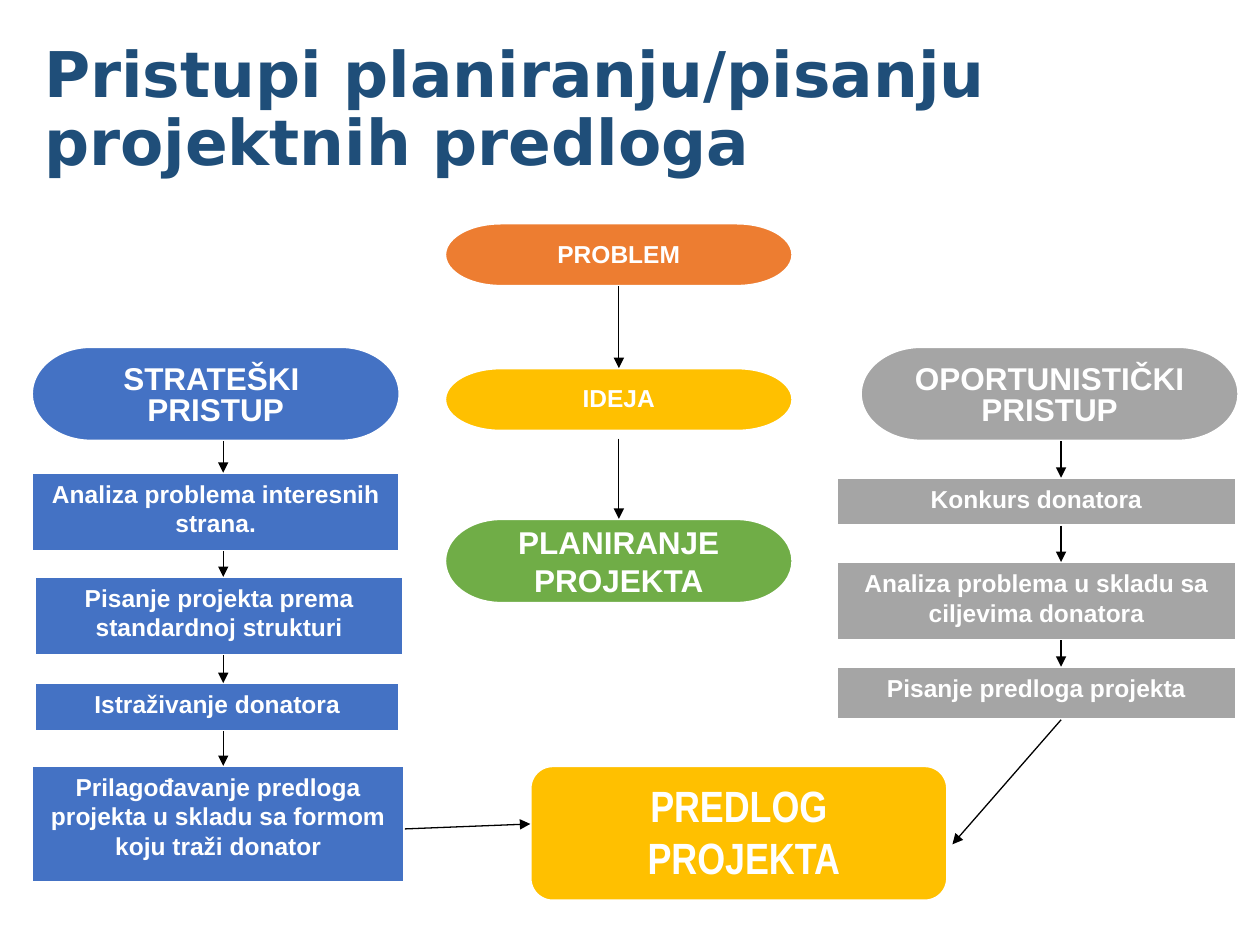
from dataclasses import dataclass
from itertools import pairwise
from typing import Optional

from lxml.etree import SubElement
from pptx import Presentation
from pptx.dml.color import RGBColor
from pptx.enum.shapes import MSO_CONNECTOR, MSO_SHAPE as Shp
from pptx.enum.text import MSO_ANCHOR as Anchor, PP_ALIGN as Align
from pptx.oxml.ns import qn
from pptx.shapes.autoshape import Shape
from pptx.shapes.connector import Connector
from pptx.util import Cm, Pt


@dataclass(frozen=True)
class Theme:
    title: str = "1F4E79"
    white: str = "FFFFFF"
    arrow: str = "000000"
    blue: str = "4472C4"
    gray: str = "A5A5A5"
    orange: str = "ED7D31"
    yellow: str = "FFC000"
    green: str = "70AD47"
    font: str = "Arial"
    title_font: str = "DejaVu Sans"
    result_font: str = "Arial Narrow"
    title_size: int = 36
    result_size: int = 25
    heading_size: int = 18
    step_size: int = 14
    outline: float = 1.5
    arrow_width: float = 0.75


T = Theme()


@dataclass(frozen=True)
class Box:
    """A flow chart box; lengths in centimetres, one paragraph per text line."""
    text: str
    left: float
    top: float
    width: float
    height: float
    fill: str
    kind: Shp = Shp.FLOWCHART_PROCESS
    size: int = T.step_size
    font: str = T.font
    anchor: Anchor = Anchor.TOP
    spacing: Optional[float] = None

    @property
    def bottom(self) -> float:
        return self.top + self.height


HEADING = {"kind": Shp.FLOWCHART_TERMINATOR, "size": T.heading_size}
LEFT_X, CENTER_X, RIGHT_X = 0.64, 8.97, 16.87
LEFT_W, CENTER_W, RIGHT_W = 7.42, 7.01, 8.05
LEFT_ARROW_X, RIGHT_ARROW_X = 4.5, 21.39

STRATEGIC = [
    Box("STRATEŠKI \nPRISTUP", LEFT_X, 6.99, LEFT_W, 1.9, T.blue, spacing=0.8, **HEADING),
    Box("Analiza problema interesnih strana.", LEFT_X, 9.53, LEFT_W, 1.58, T.blue),
    Box("Pisanje projekta prema standardnoj strukturi", 0.71, 11.63, LEFT_W, 1.58, T.blue),
    Box("Istraživanje donatora", 0.71, 13.77, 7.34, 0.97, T.blue),
    Box("Prilagođavanje predloga projekta u skladu sa formom koju traži donator",
        LEFT_X, 15.44, 7.52, 2.34, T.blue),
]
OPPORTUNISTIC = [
    Box("OPORTUNISTIČKI PRISTUP", 17.35, 6.99, 7.62, 1.9, T.gray, spacing=0.8, **HEADING),
    Box("Konkurs donatora", RIGHT_X, 9.63, RIGHT_W, 0.97, T.gray),
    Box("Analiza problema u skladu sa ciljevima donatora",
        RIGHT_X, 11.33, RIGHT_W, 1.58, T.gray),
    Box("Pisanje predloga projekta", RIGHT_X, 13.44, RIGHT_W, 1.07, T.gray),
]
PROBLEM = Box("PROBLEM", CENTER_X, 4.5, CENTER_W, 1.27, T.orange, Shp.FLOWCHART_TERMINATOR)
IDEA = Box("IDEJA", CENTER_X, 7.42, CENTER_W, 1.27, T.yellow, Shp.FLOWCHART_TERMINATOR)
PLANNING = Box("PLANIRANJE PROJEKTA", CENTER_X, 10.46, CENTER_W, 1.7, T.green,
               anchor=Anchor.MIDDLE, **HEADING)
PROPOSAL = Box("PREDLOG\n PROJEKTA", 10.69, 15.44, 8.41, 2.72, T.yellow,
               Shp.FLOWCHART_ALTERNATE_PROCESS, T.result_size, T.result_font)


def write(shape: Shape, text: str, font: str, size: int, color: str,
          align: Align, anchor: Anchor, spacing: Optional[float]) -> None:
    tf = shape.text_frame
    tf.word_wrap = True
    tf.vertical_anchor = anchor
    for i, line in enumerate(text.split("\n")):
        p = tf.add_paragraph() if i else tf.paragraphs[0]
        p.alignment, p.line_spacing = align, spacing
        r = p.add_run()
        r.text = line
        for name, value in {"name": font, "size": Pt(size), "bold": True}.items():
            setattr(r.font, name, value)
        r.font.color.rgb = RGBColor.from_string(color)


def draw_box(s, box: Box) -> Shape:
    sp = s.shapes.add_shape(box.kind, Cm(box.left), Cm(box.top), Cm(box.width), Cm(box.height))
    sp.shadow.inherit = False
    sp.fill.solid()
    sp.fill.fore_color.rgb = RGBColor.from_string(box.fill)
    sp.line.color.rgb = RGBColor.from_string(T.white)
    sp.line.width = Pt(T.outline)
    write(sp, box.text, box.font, box.size, T.white, Align.CENTER, box.anchor, box.spacing)
    return sp


def draw_arrow(s, x1: float, y1: float, x2: float, y2: float) -> Connector:
    arrow = s.shapes.add_connector(MSO_CONNECTOR.STRAIGHT, Cm(x1), Cm(y1), Cm(x2), Cm(y2))
    arrow.line.color.rgb = RGBColor.from_string(T.arrow)
    arrow.line.width = Pt(T.arrow_width)
    SubElement(arrow.line._get_or_add_ln(), qn("a:tailEnd"), type="triangle")
    SubElement(arrow._element.spPr, qn("a:effectLst"))
    return arrow


def draw_column(s, boxes: list[Box], arrow_x: float) -> None:
    """Draw boxes top to bottom with an arrow across each gap."""
    for box in boxes:
        draw_box(s, box)
    for upper, lower in pairwise(boxes):
        draw_arrow(s, arrow_x, upper.bottom, arrow_x, lower.top)


def draw_center(s) -> None:
    problem, idea, planning = (draw_box(s, box) for box in (PROBLEM, IDEA, PLANNING))
    x = CENTER_X + CENTER_W / 2
    first = draw_arrow(s, x, PROBLEM.bottom, x, IDEA.top)
    first.begin_connect(problem, 2)
    first.end_connect(idea, 0)
    draw_arrow(s, x, 8.84, x, PLANNING.top).end_connect(planning, 0)


def main() -> None:
    prs = Presentation()
    prs.slide_width, prs.slide_height = Cm(25.4), Cm(19.05)
    s = prs.slides.add_slide(prs.slide_layouts[6])

    title = s.shapes.add_textbox(Cm(0.64), Cm(0.43), Cm(24.13), Cm(3.61))
    write(title, "Pristupi planiranju/pisanju projektnih predloga", T.title_font,
          T.title_size, T.title, Align.LEFT, Anchor.MIDDLE, 0.9)

    draw_column(s, STRATEGIC, LEFT_ARROW_X)
    draw_column(s, OPPORTUNISTIC, RIGHT_ARROW_X)
    draw_center(s)
    draw_box(s, PROPOSAL)
    draw_arrow(s, 8.16, 16.71, PROPOSAL.left, 16.61)
    draw_arrow(s, RIGHT_ARROW_X, OPPORTUNISTIC[-1].bottom, 19.2, 17.02)

    prs.save("out.pptx")


if __name__ == "__main__":
    main()
